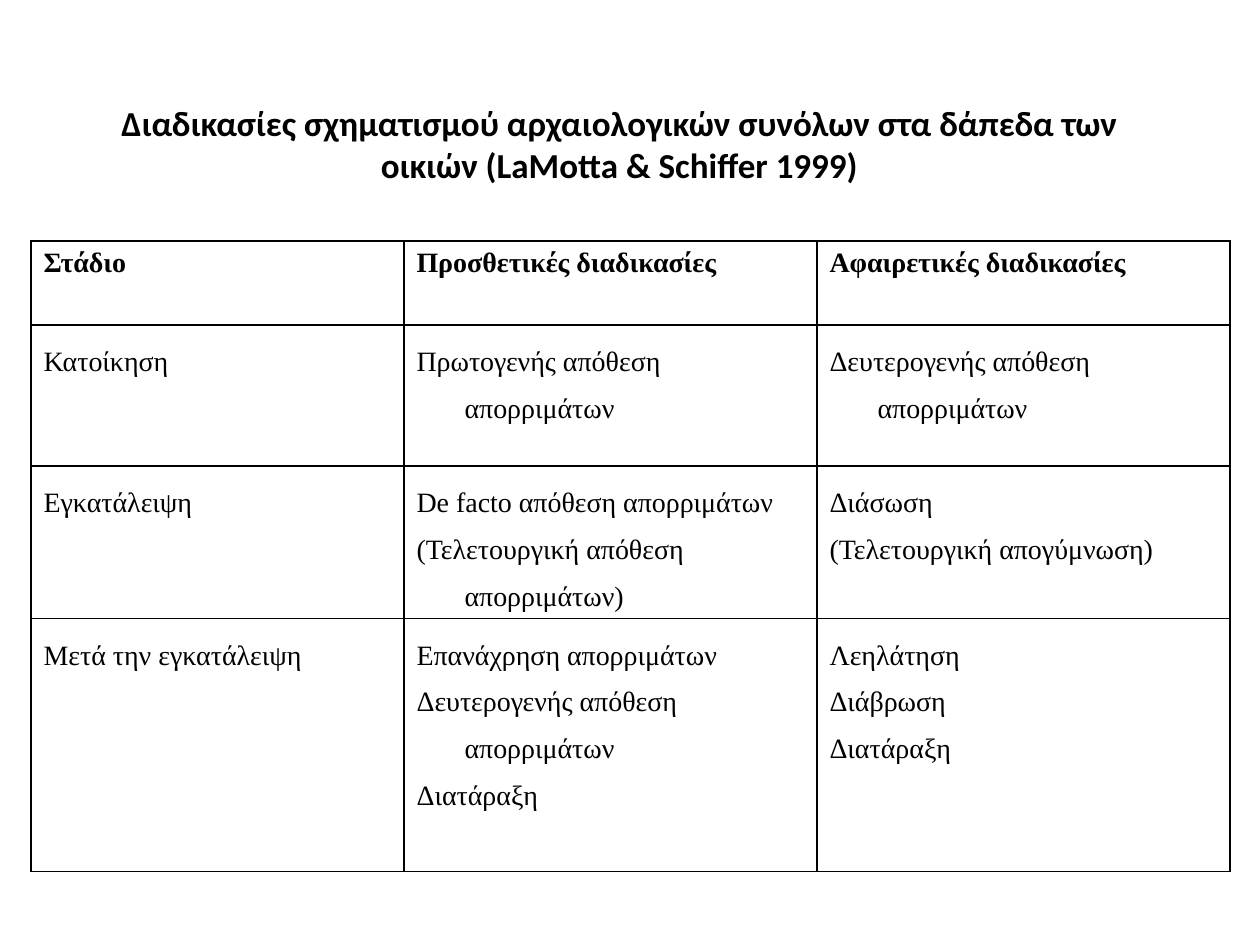
from dataclasses import dataclass

from lxml.etree import SubElement
from pptx import Presentation
from pptx.dml.color import RGBColor
from pptx.enum.text import MSO_ANCHOR, PP_ALIGN
from pptx.oxml.ns import qn
from pptx.util import Emu, Pt

PX_PER_INCH = 126


def px(length):
    return Emu(round(length * 914400 / PX_PER_INCH))


@dataclass(frozen=True)
class Theme:
    ink: str = "000000"
    paper: str = "FFFFFF"
    title_font: str = "Calibri"
    table_font: str = "Times New Roman"
    title_size: int = 20
    table_size: int = 16
    border: int = 1


THEME = Theme()

TITLE = "Διαδικασίες σχηματισμού αρχαιολογικών συνόλων στα δάπεδα των οικιών (LaMotta & Schiffer 1999)"
STAGES = [
    ["Στάδιο", "Προσθετικές διαδικασίες", "Αφαιρετικές διαδικασίες"],
    ["Κατοίκηση", "Πρωτογενής απόθεση απορριμάτων", "Δευτερογενής απόθεση απορριμάτων"],
    [
        "Εγκατάλειψη",
        "De facto απόθεση απορριμάτων\n(Τελετουργική απόθεση απορριμάτων)",
        "Διάσωση\n(Τελετουργική απογύμνωση)",
    ],
    [
        "Μετά την εγκατάλειψη",
        "Επανάχρηση απορριμάτων\nΔευτερογενής απόθεση απορριμάτων\nΔιατάραξη",
        "Λεηλάτηση\nΔιάβρωση\nΔιατάραξη",
    ],
]
COLUMN_WIDTHS = [373, 413, 413]
ROW_HEIGHTS = [84, 141, 141, 253]
HANGING_INDENT = 48


def style_font(font, name, size, bold):
    font.name = name
    font.size = Pt(size)
    font.bold = bold
    font.color.rgb = RGBColor.from_string(THEME.ink)


def add_title(page, left, top, width, height):
    frame = page.shapes.add_textbox(px(left), px(top), px(width), px(height)).text_frame
    frame.word_wrap = True
    frame.vertical_anchor = MSO_ANCHOR.MIDDLE
    para = frame.paragraphs[0]
    para.text = TITLE
    para.alignment = PP_ALIGN.CENTER
    style_font(para.font, THEME.title_font, THEME.title_size, True)


def outline_cell(cell):
    properties = cell._tc.get_or_add_tcPr()
    for side in ("a:lnL", "a:lnR", "a:lnT", "a:lnB"):
        line = SubElement(properties, qn(side), w=str(Pt(THEME.border)))
        SubElement(SubElement(line, qn("a:solidFill")), qn("a:srgbClr"), val=THEME.ink)


def fill_cell(cell, text, is_header):
    outline_cell(cell)
    cell.fill.solid()
    cell.fill.fore_color.rgb = RGBColor.from_string(THEME.paper)
    cell.text = text
    for para in cell.text_frame.paragraphs:
        properties = para._p.get_or_add_pPr()
        properties.set("marL", str(px(HANGING_INDENT)))
        properties.set("indent", str(-px(HANGING_INDENT)))
        if not is_header:
            para.line_spacing = 1.5
        style_font(para.font, THEME.table_font, THEME.table_size, is_header)


def add_stage_table(page, left, top):
    table = page.shapes.add_table(
        len(STAGES), len(COLUMN_WIDTHS),
        px(left), px(top), px(sum(COLUMN_WIDTHS)), px(sum(ROW_HEIGHTS)),
    ).table
    for column, width in zip(table.columns, COLUMN_WIDTHS):
        column.width = px(width)
    for row_index, (row, height) in enumerate(zip(table.rows, ROW_HEIGHTS)):
        row.height = px(height)
        for cell, text in zip(row.cells, STAGES[row_index]):
            fill_cell(cell, text, row_index == 0)


def main():
    deck = Presentation()
    deck.slide_width, deck.slide_height = px(1260), px(945)
    page = deck.slides.add_slide(deck.slide_layouts[6])
    add_stage_table(page, 31, 241)
    add_title(page, 84, 42, 1071, 203)
    deck.save("out.pptx")


if __name__ == "__main__":
    main()
